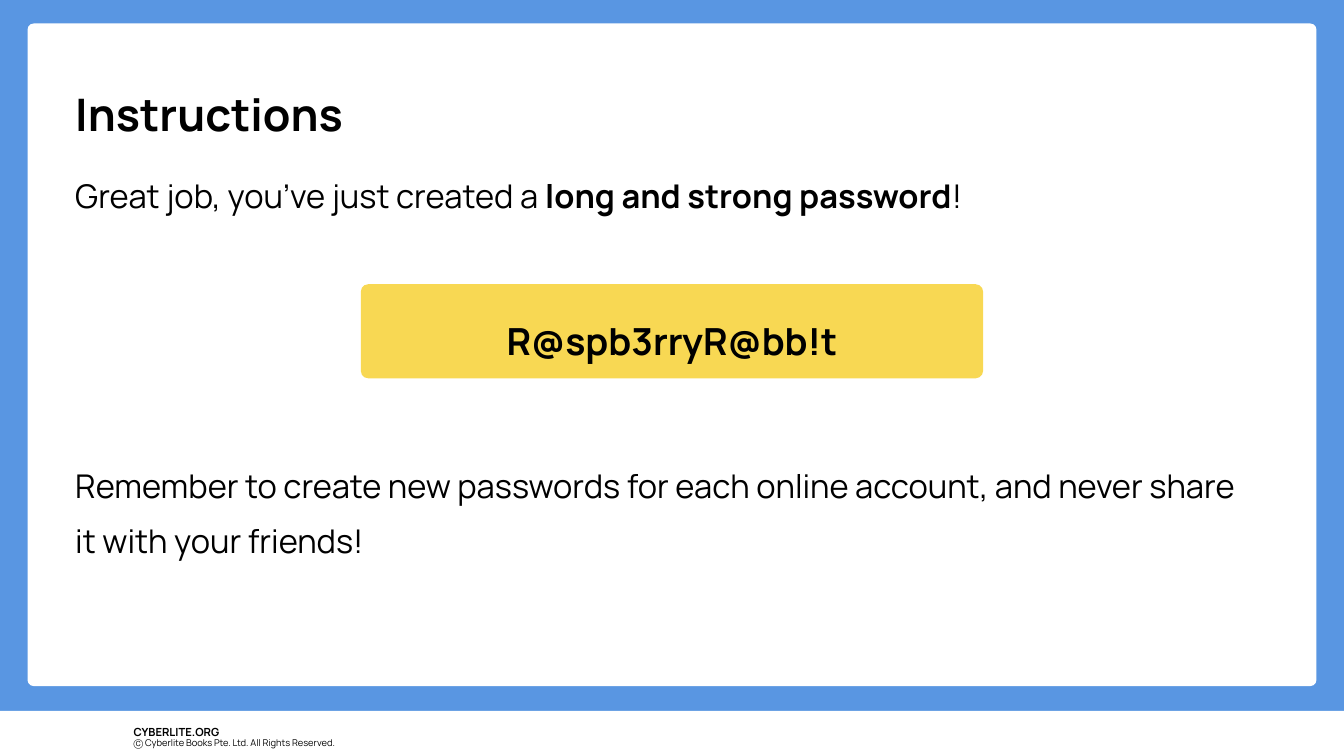
import pptx
import pptx.dml.color
import pptx.enum.shapes
import pptx.enum.text
import pptx.util

Inches = pptx.util.Inches
SHAPE = pptx.enum.shapes.MSO_SHAPE
ALIGN = pptx.enum.text.PP_ALIGN
ANCHOR = pptx.enum.text.MSO_ANCHOR

COLORS = {"frame": "5996E2", "paper": "FFFFFF", "highlight": "F8D853", "ink": "000000"}
FONT = "Manrope"
LINE_SPACING = 1.4
SLIDE_SIZE = (20, 11.25)

PANELS = {
    "footer": {"box": (0, 10.58, 20, 0.67), "color": "paper", "radius": 0},
    "card": {"box": (0.41, 0.35, 19.18, 9.86), "color": "paper", "radius": 0.09},
    "password": {"box": (5.37, 4.23, 9.26, 1.4), "color": "highlight", "radius": 0.11},
}

PASSWORD = {"runs": [("R@spb3rryR@bb!t", True)], "size": 40}

TEXTS = [
    {"box": (1.99, 10.72, 1.85, 0.23), "size": 12, "runs": [("CYBERLITE.ORG", True)]},
    {"box": (1.99, 10.9, 4.63, 0.17), "size": 10,
     "runs": [("Ⓒ Cyberlite Books Pte. Ltd. All Rights Reserved.", False)]},
    {"box": (1.12, 0.97, 9.64, 0.95), "size": 48, "runs": [("Instructions", True)]},
    {"box": (1.12, 2.38, 17.57, 0.68), "size": 35,
     "runs": [("Great job, you’ve just created a ", False),
              ("long and strong password", True), ("!", False)]},
    {"box": (1.12, 6.7, 17.57, 1.36), "size": 35,
     "runs": [("Remember to create new passwords for each online account, "
               "and never share it with your friends!", False)]},
]


def rgb(name):
    return pptx.dml.color.RGBColor.from_string(COLORS[name])


def apply(target, values):
    for name, value in values.items():
        setattr(target, name, value)


def add_panel(slide, box, color, radius):
    kind = SHAPE.ROUNDED_RECTANGLE if radius else SHAPE.RECTANGLE
    panel = slide.shapes.add_shape(kind, *map(Inches, box))
    if radius:
        panel.adjustments[0] = radius / min(box[2:])
    panel.shadow.inherit = False
    panel.fill.solid()
    panel.fill.fore_color.rgb = rgb(color)
    panel.line.fill.background()
    return panel


def write(frame, runs, size, align=ALIGN.LEFT, anchor=ANCHOR.TOP, margin=0):
    sides = ("left", "right", "top", "bottom")
    apply(frame, {"word_wrap": True, "vertical_anchor": anchor}
          | {f"margin_{side}": Inches(margin) for side in sides})
    paragraph = frame.paragraphs[0]
    apply(paragraph, {"alignment": align, "line_spacing": LINE_SPACING})
    for text, bold in runs:
        run = paragraph.add_run()
        run.text = text
        apply(run.font, {"name": FONT, "size": pptx.util.Pt(size), "bold": bold})
        run.font.color.rgb = rgb("ink")


def main():
    deck = pptx.Presentation()
    deck.slide_width, deck.slide_height = map(Inches, SLIDE_SIZE)
    slide = deck.slides.add_slide(deck.slide_layouts[6])
    slide.background.fill.solid()
    slide.background.fill.fore_color.rgb = rgb("frame")

    panels = {name: add_panel(slide, **panel) for name, panel in PANELS.items()}
    write(panels["password"].text_frame, **PASSWORD,
          align=ALIGN.CENTER, anchor=ANCHOR.MIDDLE, margin=0.06)
    for text in TEXTS:
        textbox = slide.shapes.add_textbox(*map(Inches, text["box"]))
        write(textbox.text_frame, text["runs"], text["size"])

    deck.save("out.pptx")


if __name__ == "__main__":
    main()
